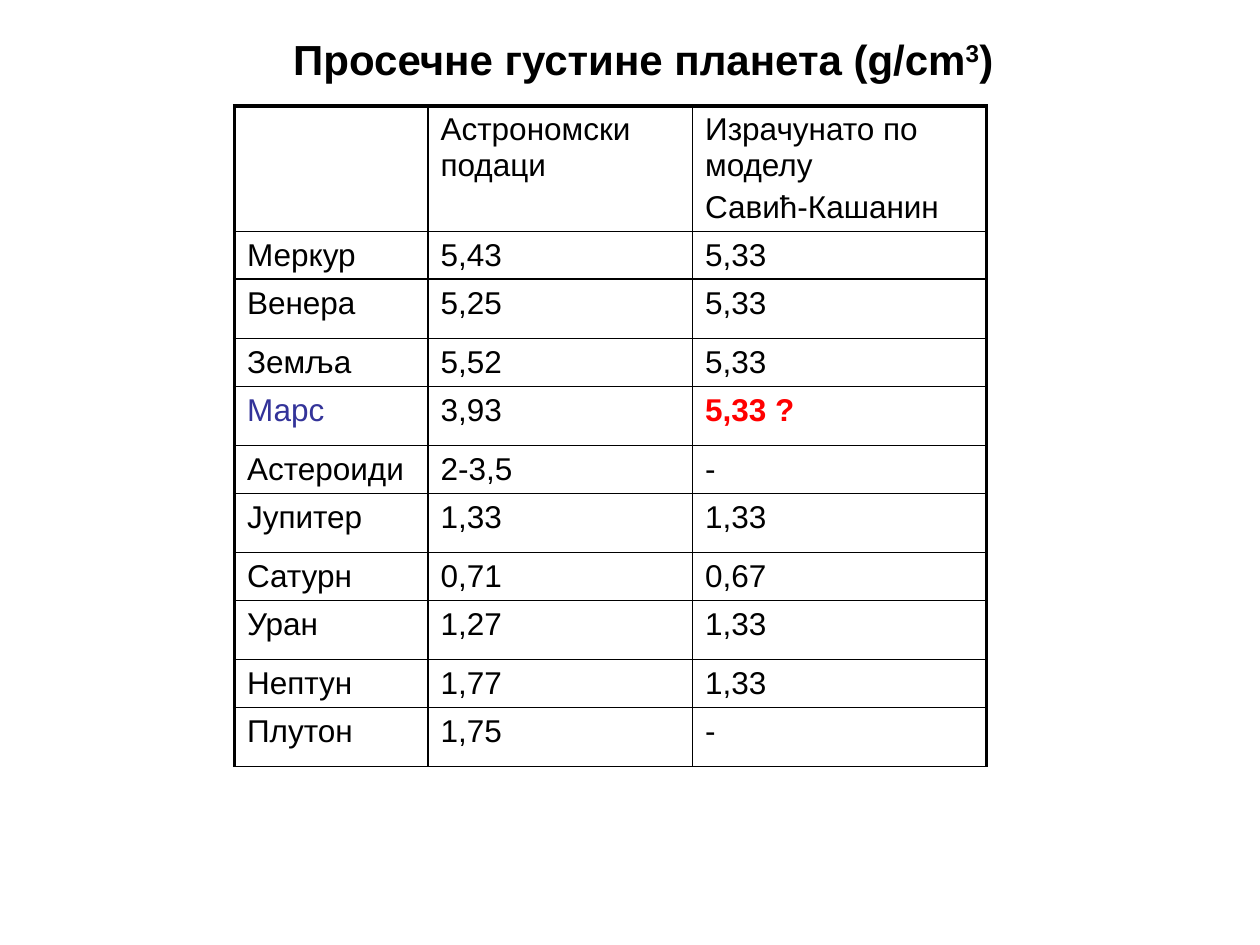
from typing import NamedTuple

from lxml import etree
from pptx import Presentation
from pptx.dml.color import RGBColor
from pptx.enum.text import PP_ALIGN
from pptx.oxml.ns import qn
from pptx.util import Pt

CENTER = PP_ALIGN.CENTER
FONT = "Arial"
COLORS = {"text": "000000", "mars": "333399", "doubt": "FF0000"}
THIN, THICK = 1, 2.25
COL_WIDTHS = (110.6, 151.2, 168)
HEADER_HEIGHT, LOW_ROW, HIGH_ROW = 71, 27, 33.8


class Planet(NamedTuple):
    name: str
    observed: str
    model: str
    name_color: str = "text"
    model_color: str = "text"
    model_bold: bool = False


HEADER = ("", "Астрономски подаци", "Израчунато по моделу\nСавић-Кашанин")
PLANETS = (
    Planet("Меркур", "5,43", "5,33"),
    Planet("Венера", "5,25", "5,33"),
    Planet("Земља", "5,52", "5,33"),
    Planet("Марс", "3,93", "5,33 ?", "mars", "doubt", True),
    Planet("Астероиди", "2-3,5", "-"),
    Planet("Јупитер", "1,33", "1,33"),
    Planet("Сатурн", "0,71", "0,67"),
    Planet("Уран", "1,27", "1,33"),
    Planet("Нептун", "1,77", "1,33"),
    Planet("Плутон", "1,75", "-"),
)


def style_font(font, size: float, color: str = "text", bold: bool = False) -> None:
    font.name, font.size, font.bold = FONT, Pt(size), bold
    font.color.rgb = RGBColor.from_string(COLORS[color])


def set_borders(cell, left: float, right: float, top: float, bottom: float) -> None:
    tc_pr = cell._tc.get_or_add_tcPr()
    for side, width in zip("LRTB", (left, right, top, bottom)):
        ln = etree.SubElement(tc_pr, qn(f"a:ln{side}"), w=str(Pt(width)))
        fill = etree.SubElement(ln, qn("a:solidFill"))
        etree.SubElement(fill, qn("a:srgbClr"), val=COLORS["text"])


def fill_cell(cell, text: str, color: str = "text", bold: bool = False) -> None:
    cell.fill.background()
    tf = cell.text_frame
    tf.text = text
    for i, p in enumerate(tf.paragraphs):
        style_font(p.font, 18)
        if i:
            p.space_before = Pt(4)
        for r in p.runs:
            style_font(r.font, 18, color, bold)


def add_title(s) -> None:
    sp = s.shapes.add_textbox(Pt(158.4), Pt(12.2), Pt(418.3), Pt(36))
    tf = sp.text_frame
    tf.word_wrap = True
    tf.margin_top = Pt(7)
    p = tf.paragraphs[0]
    p.alignment = CENTER
    for text, baseline in (("Просечне густине планета (g/cm", 0), ("3", 30000), (")", 0)):
        r = p.add_run()
        r.text = text
        style_font(r.font, 24, bold=True)
        if baseline:
            r._r.get_or_add_rPr().set("baseline", str(baseline))


def add_density_table(s) -> None:
    heights = [HEADER_HEIGHT] + [HIGH_ROW if i % 2 else LOW_ROW for i in range(len(PLANETS))]
    last_col = len(COL_WIDTHS) - 1
    table = s.shapes.add_table(len(heights), len(COL_WIDTHS), Pt(134), Pt(60.5),
                               Pt(sum(COL_WIDTHS)), Pt(sum(heights))).table
    table.first_row = table.horz_banding = False
    for col, width in zip(table.columns, COL_WIDTHS):
        col.width = Pt(width)
    for i, (row, height) in enumerate(zip(table.rows, heights)):
        row.height = Pt(height)
        for j, cell in enumerate(row.cells):
            set_borders(cell, THIN if j else THICK, THICK if j == last_col else THIN,
                        THIN if i else THICK, THIN)
    for j, text in enumerate(HEADER):
        fill_cell(table.cell(0, j), text)
    for i, planet in enumerate(PLANETS, 1):
        fill_cell(table.cell(i, 0), planet.name, planet.name_color)
        fill_cell(table.cell(i, 1), planet.observed)
        fill_cell(table.cell(i, 2), planet.model, planet.model_color, planet.model_bold)


def main() -> None:
    prs = Presentation()
    prs.slide_width, prs.slide_height = Pt(720), Pt(540)
    s = prs.slides.add_slide(prs.slide_layouts[6])
    add_density_table(s)
    add_title(s)
    prs.save("out.pptx")


if __name__ == "__main__":
    main()
